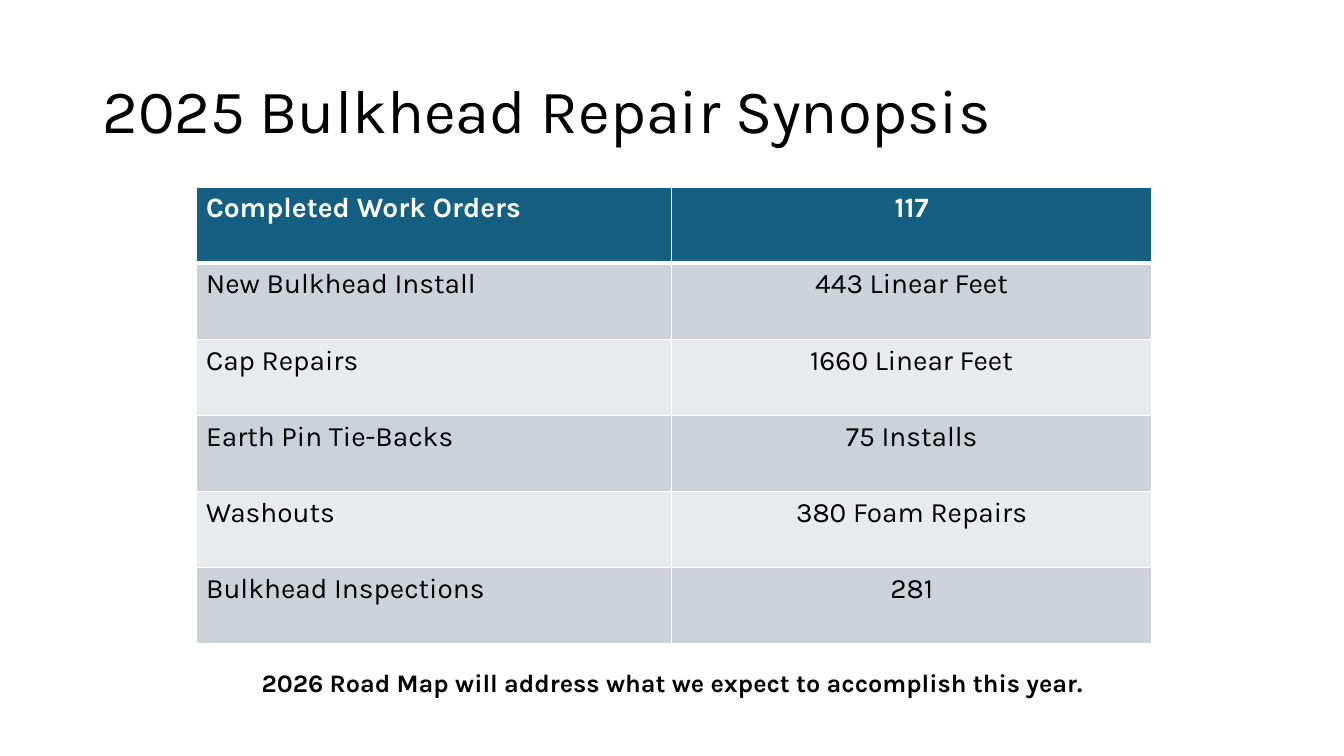
import pptx
import pptx.util
import pptx.dml.color
import pptx.enum.text
import pptx.oxml
import pptx.oxml.ns

Cm = pptx.util.Cm
Pt = pptx.util.Pt
ALIGN = pptx.enum.text.PP_ALIGN
ANCHOR = pptx.enum.text.MSO_ANCHOR


def color(value):
    return pptx.dml.color.RGBColor.from_string(value)


def write(p, text, size, value, bold, align):
    p.text = text
    p.alignment = align
    p.font.name = "Karla"
    p.font.size = Pt(size)
    p.font.bold = bold
    p.font.color.rgb = color(value)


prs = pptx.Presentation()
prs.slide_width = Cm(33.87)
prs.slide_height = Cm(19.05)
s = prs.slides.add_slide(prs.slide_layouts[5])

title = s.shapes.title
title.left, title.top, title.width, title.height = Cm(2.33), Cm(1.01), Cm(29.21), Cm(3.68)
tf = title.text_frame
tf.vertical_anchor = ANCHOR.MIDDLE
p = tf.paragraphs[0]
write(p, "2025 Bulkhead Repair Synopsis", 44, "000000", False, ALIGN.LEFT)
p.line_spacing = 0.9

rows = [
    ("Completed Work Orders", "117"),
    ("New Bulkhead Install", "443 Linear Feet"),
    ("Cap Repairs", "1660 Linear Feet"),
    ("Earth Pin Tie-Backs", "75 Installs"),
    ("Washouts", "380 Foam Repairs"),
    ("Bulkhead Inspections", "281"),
]
row_height = Cm(1.92)
table = s.shapes.add_table(
    len(rows), 2, Cm(4.94), Cm(4.71), Cm(24.08), row_height * len(rows)
).table
table.columns[0].width = Cm(11.99)
table.columns[1].width = Cm(12.09)

for i, row in enumerate(rows):
    table.rows[i].height = row_height
    header = i == 0
    fill = "156082" if header else ("E8EAED", "CCD2D8")[i % 2]
    for j, text in enumerate(row):
        cell = table.cell(i, j)
        align = ALIGN.CENTER if j else ALIGN.LEFT
        write(cell.text_frame.paragraphs[0], text, 20, "FFFFFF" if header else "000000", header, align)
        tcPr = cell._tc.get_or_add_tcPr()
        for side in ("lnL", "lnR", "lnT", "lnB"):
            thick = (header and side == "lnB") or (i == 1 and side == "lnT")
            tcPr.append(pptx.oxml.parse_xml(
                f'<a:{side} {pptx.oxml.ns.nsdecls("a")} w="{Pt(3 if thick else 1)}">'
                f'<a:solidFill><a:srgbClr val="FFFFFF"/></a:solidFill></a:{side}>'
            ))
        cell.fill.solid()
        cell.fill.fore_color.rgb = color(fill)

note = s.shapes.add_textbox(Cm(4.5), Cm(16.69), Cm(24.89), Cm(1.02))
tf = note.text_frame
tf.word_wrap = True
tf.auto_size = pptx.enum.text.MSO_AUTO_SIZE.SHAPE_TO_FIT_TEXT
write(
    tf.paragraphs[0],
    "2026 Road Map will address what we expect to accomplish this year.",
    18, "000000", True, ALIGN.CENTER,
)

prs.save("out.pptx")
